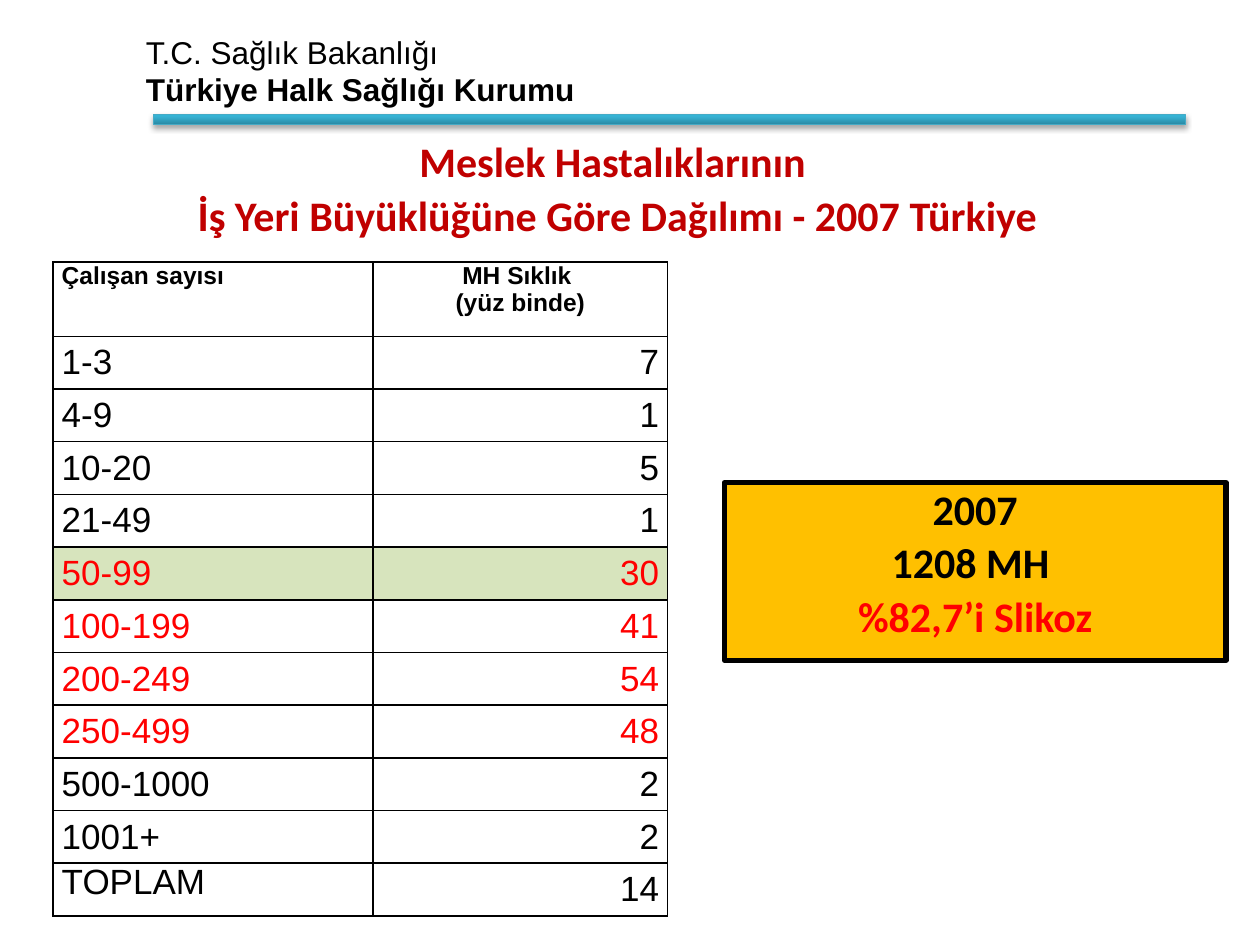
from copy import deepcopy
from dataclasses import dataclass

from lxml.etree import SubElement
from pptx import Presentation
from pptx.dml.color import RGBColor
from pptx.enum.shapes import MSO_SHAPE as Shape
from pptx.enum.text import MSO_ANCHOR as Anchor, PP_ALIGN as Align
from pptx.oxml.ns import qn
from pptx.util import Inches, Pt


@dataclass(frozen=True)
class Theme:
    black: str = "000000"
    title: str = "C00000"
    accent: str = "FF0000"
    highlight: str = "D7E4BD"
    callout: str = "FFC000"
    bar_line: str = "46AAC5"
    bar_stops: tuple = ((0, "2A88A2"), (0.8, "37B1D2"), (1, "34B4D6"))
    body_font: str = "Arial"
    display_font: str = "Calibri"
    agency_size: int = 18
    display_size: int = 24
    header_size: int = 14
    cell_size: int = 20


THEME = Theme()
rgb = RGBColor.from_string

HEADER = ("Çalışan sayısı", "MH Sıklık \n(yüz binde)")
RATES = (
    ("1-3", "7"), ("4-9", "1"), ("10-20", "5"), ("21-49", "1"),
    ("50-99", "30"), ("100-199", "41"), ("200-249", "54"), ("250-499", "48"),
    ("500-1000", "2"), ("1001+", "2"), ("TOPLAM", "14"),
)
HIGH_RATES = ("50-99", "100-199", "200-249", "250-499")
HIGHLIGHTED = "50-99"
TOTAL = "TOPLAM"


def write_lines(frame, lines, size, font, align=Align.LEFT, spacing=None, gap=0):
    """Write one paragraph per (text, colour, bold) line."""
    for index, (text, color, bold) in enumerate(lines):
        paragraph = frame.add_paragraph() if index else frame.paragraphs[0]
        paragraph.alignment = align
        paragraph.line_spacing = spacing
        paragraph.space_before = Pt(gap if index else 0)
        run = paragraph.add_run()
        run.text = text
        run.font.size, run.font.name, run.font.bold = Pt(size), font, bold
        run.font.color.rgb = rgb(color)


def write_display(frame, lines):
    """Write the large, bold, centred lines of the title and the callout."""
    frame.word_wrap = True
    frame.vertical_anchor = Anchor.TOP
    write_lines(frame, [(text, color, True) for text, color in lines],
                THEME.display_size, THEME.display_font, Align.CENTER, 0.9, 4.8)


def add_agency_header(slide, left, top, width, height):
    # Agency name
    agency = slide.shapes.add_textbox(left, top, width, height).text_frame
    agency.word_wrap = True
    write_lines(agency, [("T.C. Sağlık Bakanlığı", THEME.black, False),
                         ("Türkiye Halk Sağlığı Kurumu", THEME.black, True)],
                THEME.agency_size, THEME.body_font)

    # Gradient rule beneath it
    rule = slide.shapes.add_shape(Shape.RECTANGLE, left + Inches(0.16), top + Inches(0.7),
                                  Inches(8.19), Inches(0.08))
    rule.line.color.rgb = rgb(THEME.bar_line)
    rule.line.width = Pt(0.75)
    rule.fill.gradient()
    rule.fill.gradient_angle = 90
    properties = rule._element.spPr
    stop_list = properties.find(qn("a:gradFill")).find(qn("a:gsLst"))
    stop_list.append(deepcopy(stop_list[-1]))
    for stop, (position, color) in zip(rule.fill.gradient_stops, THEME.bar_stops):
        stop.position = position
        stop.color.rgb = rgb(color)

    # Soft shadow below the rule
    rule.shadow.inherit = False
    shadow = SubElement(properties.find(qn("a:effectLst")), qn("a:outerShdw"),
                        blurRad=str(Pt(3.1)), dist=str(Pt(1.8)), dir="5400000", rotWithShape="0")
    shadow_color = SubElement(shadow, qn("a:srgbClr"), val=THEME.black)
    SubElement(shadow_color, qn("a:alpha"), val="35000")


def add_title(slide, left, top, width, height):
    title = slide.shapes.title
    title.left, title.top, title.width, title.height = left, top, width, height
    write_display(title.text_frame, [
        ("Meslek Hastalıklarının ", THEME.title),
        ("İş Yeri Büyüklüğüne Göre Dağılımı - 2007 Türkiye", THEME.title),
    ])


def add_borders(cell):
    properties = cell._tc.get_or_add_tcPr()
    for index, side in enumerate(("a:lnL", "a:lnR", "a:lnT", "a:lnB")):
        border = properties.makeelement(qn(side), {"w": str(Pt(1))})
        fill = SubElement(border, qn("a:solidFill"))
        SubElement(fill, qn("a:srgbClr"), val=THEME.black)
        properties.insert(index, border)


def fill_cell(cell, text, size, align, anchor, color, bold, background):
    cell.margin_left = cell.margin_right = Inches(0.07)
    cell.margin_top = cell.margin_bottom = 0
    cell.vertical_anchor = anchor
    if background:
        cell.fill.solid()
        cell.fill.fore_color.rgb = rgb(background)
    else:
        cell.fill.background()
    add_borders(cell)
    write_lines(cell.text_frame, [(line, color, bold) for line in text.split("\n")],
                size, THEME.body_font, align)


def add_rate_table(slide, left, top, width, height):
    table = slide.shapes.add_table(len(RATES) + 1, 2, left, top, width, height).table
    table.first_row = table.horz_banding = False
    table.columns[0].width = Inches(2.54)
    table.columns[1].width = width - Inches(2.54)

    # Header row, then equal rows in the remaining height
    header_height = Inches(0.59)
    table.rows[0].height = header_height
    for column, (text, align) in enumerate(zip(HEADER, (Align.LEFT, Align.CENTER))):
        fill_cell(table.cell(0, column), text, THEME.header_size, align,
                  Anchor.TOP, THEME.black, True, None)
    for row, (group, rate) in enumerate(RATES, start=1):
        table.rows[row].height = (height - header_height) // len(RATES)
        color = THEME.accent if group in HIGH_RATES else THEME.black
        background = THEME.highlight if group == HIGHLIGHTED else None
        group_anchor = Anchor.TOP if group == TOTAL else Anchor.MIDDLE
        fill_cell(table.cell(row, 0), group, THEME.cell_size, Align.LEFT,
                  group_anchor, color, False, background)
        fill_cell(table.cell(row, 1), rate, THEME.cell_size, Align.RIGHT,
                  Anchor.MIDDLE, color, False, background)


def add_callout(slide, left, top, width, height):
    callout = slide.shapes.add_shape(Shape.RECTANGLE, left, top, width, height)
    callout.shadow.inherit = False
    callout.fill.solid()
    callout.fill.fore_color.rgb = rgb(THEME.callout)
    callout.line.color.rgb = rgb(THEME.black)
    callout.line.width = Pt(3)
    write_display(callout.text_frame, [
        ("2007", THEME.black),
        ("1208 MH ", THEME.black),
        ("%82,7’i Slikoz", THEME.accent),
    ])


def main():
    deck = Presentation()
    deck.slide_width, deck.slide_height = Inches(10), Inches(7.5)
    slide = deck.slides.add_slide(deck.slide_layouts[5])
    add_agency_header(slide, Inches(1.06), Inches(0.21), Inches(6.85), Inches(0.71))
    add_title(slide, Inches(0.47), Inches(1.07), Inches(8.86), Inches(1.09))
    add_rate_table(slide, Inches(0.42), Inches(2.08), Inches(4.88), Inches(5.19))
    add_callout(slide, Inches(5.75), Inches(3.83), Inches(3.98), Inches(1.41))
    deck.save("out.pptx")


if __name__ == "__main__":
    main()
